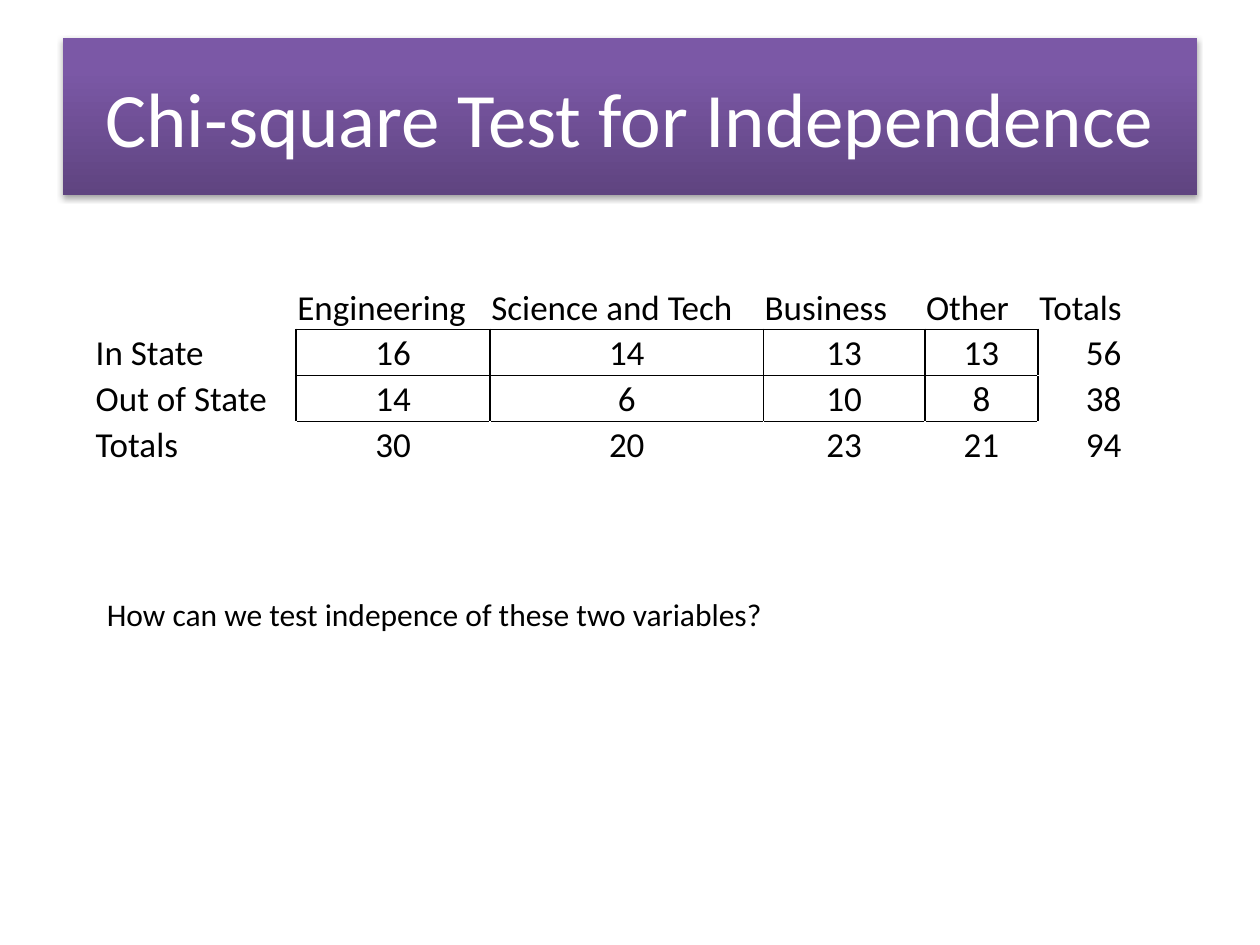
from dataclasses import dataclass

from lxml import etree
from pptx import Presentation
from pptx import util as u
from pptx.dml.color import RGBColor
from pptx.enum import text
from pptx.oxml import parse_xml
from pptx.oxml.ns import nsdecls, qn

FONT = "Calibri"
BLACK, WHITE = "000000", "FFFFFF"


@dataclass
class Column:
    heading: str
    width: float
    values: tuple[str, str, str]


COLUMNS = [
    Column("", 1.6, ("In State", "Out of State", "Totals")),
    Column("Engineering", 1.54, ("16", "14", "30")),
    Column("Science and Tech", 2.17, ("14", "6", "20")),
    Column("Business", 1.28, ("13", "10", "23")),
    Column("Other", 0.9, ("13", "8", "21")),
    Column("Totals", 1.04, ("56", "38", "94")),
]
SIDES = {"lnL": (0, -1), "lnR": (0, 1), "lnT": (-1, 0), "lnB": (1, 0)}


def rgb(color: str) -> RGBColor:
    return RGBColor.from_string(color)


def set_text(p, content: str, size: float, color: str, align=text.PP_ALIGN.LEFT) -> None:
    p.text = content
    p.alignment = align
    p.font.name, p.font.size = FONT, u.Pt(size)
    p.font.color.rgb = rgb(color)


def add_banner_effects(sp) -> None:
    """Give the title its purple gradient and soft drop shadow."""
    stops = [(0, "5F4480"), (80, "7B58A6"), (100, "7C57A8")]
    gs = "".join(
        f'<a:gs pos="{pos * 1000}"><a:srgbClr val="{color}"/></a:gs>' for pos, color in stops
    )
    sp_pr = sp._element.spPr
    sp_pr.append(parse_xml(
        f'<a:gradFill {nsdecls("a")} rotWithShape="1"><a:gsLst>{gs}</a:gsLst>'
        '<a:lin ang="16200000" scaled="0"/></a:gradFill>'
    ))
    sp_pr.append(parse_xml(
        f'<a:effectLst {nsdecls("a")}><a:outerShdw blurRad="{u.Pt(3.1)}" dist="{u.Pt(1.8)}" '
        f'dir="5400000" rotWithShape="0"><a:srgbClr val="{BLACK}"><a:alpha val="35000"/>'
        '</a:srgbClr></a:outerShdw></a:effectLst>'
    ))


def is_count(row: int, col: int) -> bool:
    """Tell whether a cell is one of the boxed observed counts."""
    return row in (1, 2) and 1 <= col <= 4


def set_borders(cell, row: int, col: int) -> None:
    tc_pr = cell._tc.get_or_add_tcPr()
    for i, (side, (dr, dc)) in enumerate(SIDES.items()):
        boxed = is_count(row, col) or is_count(row + dr, col + dc)
        ln = etree.Element(qn(f"a:{side}"), w=str(u.Pt(1)))
        fill = etree.SubElement(ln, qn("a:solidFill"))
        etree.SubElement(fill, qn("a:srgbClr"), val=BLACK if boxed else WHITE)
        tc_pr.insert(i, ln)


def add_contingency_table(slide) -> None:
    frame = slide.shapes.add_table(
        4, len(COLUMNS), u.Inches(0.75), u.Inches(2.25), u.Inches(8.53), u.Inches(1.46)
    )
    table = frame.table
    table.first_row = table.horz_banding = False
    for c, column in enumerate(COLUMNS):
        table.columns[c].width = u.Inches(column.width)
        for r, content in enumerate((column.heading, *column.values)):
            cell = table.cell(r, c)
            cell.fill.background()
            cell.margin_left = cell.margin_right = cell.margin_top = u.Inches(0.01)
            cell.margin_bottom = 0
            cell.vertical_anchor = text.MSO_ANCHOR.BOTTOM
            align = text.PP_ALIGN.CENTER if r and c else text.PP_ALIGN.LEFT
            set_text(cell.text_frame.paragraphs[0], content, 20, BLACK, align)
            set_borders(cell, r, c)


def add_title(slide) -> None:
    title = slide.shapes.title
    title.left, title.top = u.Inches(0.5), u.Inches(0.3)
    title.width, title.height = u.Inches(9), u.Inches(1.25)
    title.text_frame.vertical_anchor = text.MSO_ANCHOR.MIDDLE
    set_text(title.text_frame.paragraphs[0], "Chi-square Test for Independence",
             44, WHITE, text.PP_ALIGN.CENTER)
    add_banner_effects(title)


def add_question(slide) -> None:
    box = slide.shapes.add_textbox(u.Inches(0.75), u.Inches(4.67), u.Inches(5.47), u.Inches(0.4))
    tf = box.text_frame
    tf.word_wrap = False
    tf.auto_size = text.MSO_AUTO_SIZE.SHAPE_TO_FIT_TEXT
    set_text(tf.paragraphs[0], "How can we test indepence of these two variables?", 18, BLACK)


def main() -> None:
    prs = Presentation()
    prs.slide_width, prs.slide_height = u.Inches(10), u.Inches(7.5)
    slide = prs.slides.add_slide(prs.slide_layouts[5])
    add_title(slide)
    add_contingency_table(slide)
    add_question(slide)
    prs.save("out.pptx")


if __name__ == "__main__":
    main()
